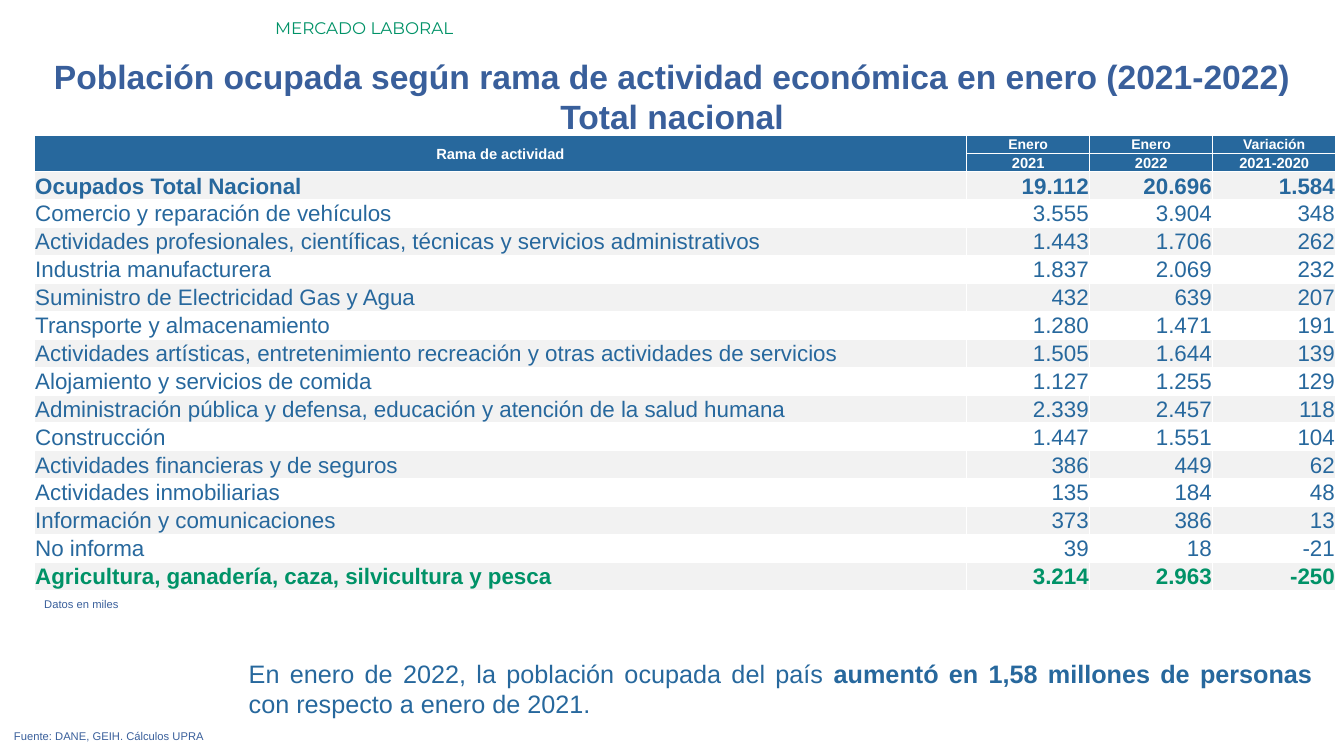
"""Slide with employment by branch of activity in Colombia, January 2021-2022."""
from pptx import Presentation
from pptx.dml.color import RGBColor
from pptx.enum import text
from pptx.util import Pt

COLORS = {"green": "009267", "title": "395F9B", "blue": "27689D",
          "white": "FFFFFF", "band": "F2F2F2"}
TITLE = ["Población ocupada según rama de actividad económica en enero (2021-2022)",
         "Total nacional"]
HEADER = [("Rama de actividad", "Enero", "Enero", "Variación"),
          ("", "2021", "2022", "2021-2020")]
BRANCHES = [
    ("Ocupados Total Nacional", "19.112", "20.696", "1.584"),
    ("Comercio y reparación de vehículos", "3.555", "3.904", "348"),
    ("Actividades profesionales, científicas, técnicas y servicios administrativos",
     "1.443", "1.706", "262"),
    ("Industria manufacturera", "1.837", "2.069", "232"),
    ("Suministro de Electricidad Gas y Agua", "432", "639", "207"),
    ("Transporte y almacenamiento", "1.280", "1.471", "191"),
    ("Actividades artísticas, entretenimiento recreación y otras actividades de servicios",
     "1.505", "1.644", "139"),
    ("Alojamiento y servicios de comida", "1.127", "1.255", "129"),
    ("Administración pública y defensa, educación y atención de la salud humana",
     "2.339", "2.457", "118"),
    ("Construcción", "1.447", "1.551", "104"),
    ("Actividades financieras y de seguros", "386", "449", "62"),
    ("Actividades inmobiliarias", "135", "184", "48"),
    ("Información y comunicaciones", "373", "386", "13"),
    ("No informa", "39", "18", "-21"),
    ("Agricultura, ganadería, caza, silvicultura y pesca", "3.214", "2.963", "-250"),
]
MESSAGE = [("En enero de 2022, la población ocupada del país ", False),
           ("aumentó en 1,58 millones de personas ", True),
           ("con respecto a enero de 2021.", False)]
LEFT, CENTER = text.PP_ALIGN.LEFT, text.PP_ALIGN.CENTER
RIGHT, JUSTIFY = text.PP_ALIGN.RIGHT, text.PP_ALIGN.JUSTIFY
TEXT_BOXES = [
    ((189.4, 9.4, 770.4, 21.8), [("MERCADO LABORAL", False)],
     dict(size=12, color="green", font="Montserrat")),
    ((170.6, 466.6, 774, 50.9), MESSAGE, dict(size=18, color="blue", align=JUSTIFY)),
    ((2.9, 517.7, 929.5, 17), [("Fuente: DANE, GEIH. Cálculos UPRA", False)],
     dict(size=8, color="title", align=JUSTIFY)),
    ((24.5, 423.4, 929.5, 17), [("Datos en miles", False)],
     dict(size=8, color="title", align=JUSTIFY)),
]
TABLE_LEFT, TABLE_TOP = 24.5, 96.5
COL_WIDTHS = [666, 87.9, 87.9, 87.9]
HEADER_HEIGHT, ROW_HEIGHT = 13, 19.95


def write(p, runs, size, color, font="Arial", align=LEFT):
    p.alignment = align
    for words, bold in runs:
        r = p.add_run()
        r.text = words
        r.font.size, r.font.name, r.font.bold = Pt(size), font, bold
        r.font.color.rgb = RGBColor.from_string(COLORS[color])


def fill_cell(cell, words, fill, bold, **fmt):
    cell.margin_left = cell.margin_right = cell.margin_top = Pt(0.7)
    cell.margin_bottom = 0
    cell.vertical_anchor = text.MSO_ANCHOR.MIDDLE
    if fill:
        cell.fill.solid()
        cell.fill.fore_color.rgb = RGBColor.from_string(COLORS[fill])
    else:
        cell.fill.background()
    write(cell.text_frame.paragraphs[0], [(words, bold)], **fmt)


def add_title(s):
    sp = s.shapes.title
    sp.left, sp.top, sp.width, sp.height = 0, Pt(36), Pt(960), Pt(65.4)
    tf = sp.text_frame
    tf.word_wrap, tf.auto_size = True, text.MSO_AUTO_SIZE.NONE
    tf.vertical_anchor = text.MSO_ANCHOR.TOP
    for i, line in enumerate(TITLE):
        p = tf.add_paragraph() if i else tf.paragraphs[0]
        write(p, [(line, True)], size=24, color="title", align=CENTER)


def add_branch_table(s):
    heights = [HEADER_HEIGHT] * len(HEADER) + [ROW_HEIGHT] * len(BRANCHES)
    tbl = s.shapes.add_table(len(heights), len(COL_WIDTHS), Pt(TABLE_LEFT), Pt(TABLE_TOP),
                             Pt(sum(COL_WIDTHS)), Pt(sum(heights))).table
    for col, width in zip(tbl.columns, COL_WIDTHS):
        col.width = Pt(width)
    for row, height in zip(tbl.rows, heights):
        row.height = Pt(height)
    tbl.first_row = tbl.horz_banding = False
    tbl.cell(0, 0).merge(tbl.cell(1, 0))
    for i, labels in enumerate(HEADER):
        for j, label in enumerate(labels):
            if label:
                fill_cell(tbl.cell(i, j), label, "blue", True, color="white",
                          size=10 if i == 0 and j else 10.5, align=CENTER)
    last = len(BRANCHES) - 1
    for i, values in enumerate(BRANCHES):
        for j, value in enumerate(values):
            fill_cell(tbl.cell(i + len(HEADER), j), value, None if i % 2 else "band",
                      i in (0, last), color="green" if i == last else "blue",
                      size=16, align=RIGHT if j else LEFT)


def main():
    prs = Presentation()
    prs.slide_width, prs.slide_height = Pt(960), Pt(540)
    s = prs.slides.add_slide(prs.slide_layouts[5])
    add_title(s)
    for box, runs, fmt in TEXT_BOXES:
        tf = s.shapes.add_textbox(*map(Pt, box)).text_frame
        tf.word_wrap = True
        write(tf.paragraphs[0], runs, **fmt)
    add_branch_table(s)
    prs.save("out.pptx")


if __name__ == "__main__":
    main()
